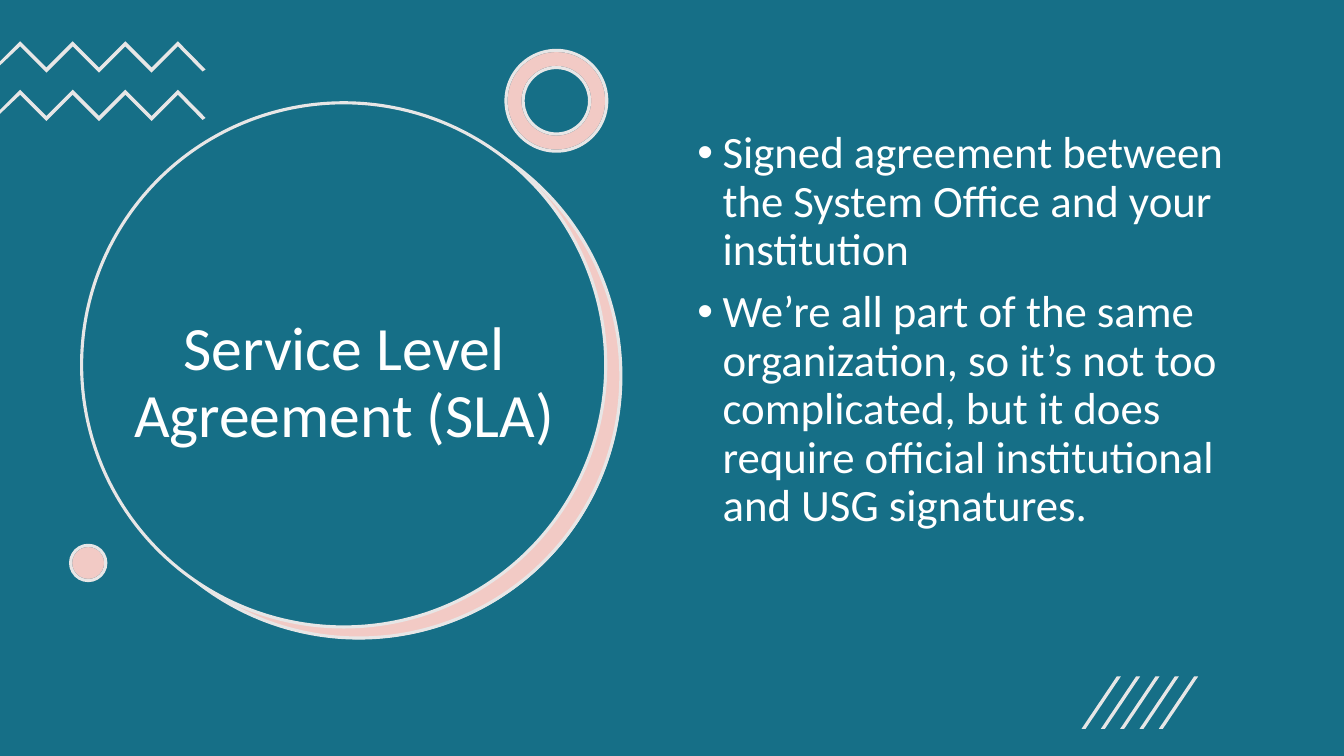
from lxml.etree import SubElement
from pptx import Presentation
from pptx.dml.color import RGBColor
from pptx.enum.shapes import MSO_SHAPE
from pptx.enum.text import MSO_ANCHOR, PP_ALIGN
from pptx.oxml.ns import qn
from pptx.util import Inches, Pt

TEAL = RGBColor(0x16, 0x6F, 0x87)
CORAL = RGBColor(0xD6, 0x52, 0x41)
PALE_GRAY = RGBColor(0xE7, 0xE6, 0xE6)
WHITE = RGBColor(0xFF, 0xFF, 0xFF)
FONT = "Calibri"

# The slide is a grid of 160 columns by 90 rows of square cells.
CELL = Inches(1) / 12


def cells(*counts):
    return [round(count * CELL) for count in counts]


def paint(shape, fill, line=None, opacity=100):
    """Set fill, outline and fill opacity (percent), without a shadow."""
    shape.shadow.inherit = False
    shape.fill.solid()
    shape.fill.fore_color.rgb = fill
    if line is None:
        shape.line.fill.background()
    else:
        shape.line.color.rgb = line
        shape.line.width = Pt(2.25)
    if opacity < 100:
        color = shape.fill._xPr.find(f"{qn('a:solidFill')}/{qn('a:srgbClr')}")
        SubElement(color, qn("a:alpha"), val=str(opacity * 1000))


presentation = Presentation()
presentation.slide_width, presentation.slide_height = cells(160, 90)
slide = presentation.slides.add_slide(presentation.slide_layouts[6])
slide.background.fill.solid()
slide.background.fill.fore_color.rgb = TEAL
shapes = slide.shapes

# Title disc: a tinted crescent shows behind the teal face
DISC_SIZE = 62.4
for left, top, fill, line, opacity in [
    (11.64, 13.68, WHITE, None, 100),
    (11.52, 13.56, CORAL, PALE_GRAY, 30),
    (9.72, 12.24, TEAL, PALE_GRAY, 100),
]:
    disc = shapes.add_shape(MSO_SHAPE.OVAL, *cells(left, top, DISC_SIZE, DISC_SIZE))
    paint(disc, fill, line, opacity)

title_frame = shapes.add_textbox(*cells(14.52, 24.6, 52.92, 42.24)).text_frame
title_frame.word_wrap = True
title_frame.vertical_anchor = MSO_ANCHOR.MIDDLE
title = title_frame.paragraphs[0]
title.text = "Service Level Agreement (SLA)"
title.alignment = PP_ALIGN.CENTER
title.line_spacing = 0.9
title.font.size = Pt(44)
title.font.name = FONT
title.font.color.rgb = WHITE

# Two zigzags running off the left edge
ZIGZAG_STEP = 3.13
ZIGZAG_THICKNESS = 0.6
upper_edge = [(2.4 + i * ZIGZAG_STEP, i % 2 * ZIGZAG_STEP) for i in range(7)]
lower_edge = [(x, y + ZIGZAG_THICKNESS) for x, y in reversed(upper_edge)]
zigzag_points = upper_edge + [(24.48, 3.36), (24.12, 3.6)] + lower_edge + [(0, 2.88), (0, 2.4)]
for top in (4.92, 10.68):
    outline = [cells(x, top + y) for x, y in zigzag_points]
    builder = shapes.build_freeform(*outline[0])
    builder.add_line_segments(outline[1:])
    paint(builder.convert_to_shape(), PALE_GRAY)

# Ring and dot: a translucent tint over white
for kind, left, top, size in [
    (MSO_SHAPE.DONUT, 60.24, 6, 12),
    (MSO_SHAPE.OVAL, 8.4, 64.92, 4.2),
]:
    for fill, line, opacity in [(WHITE, TEAL, 100), (CORAL, PALE_GRAY, 30)]:
        ornament = shapes.add_shape(kind, *cells(left, top, size, size))
        if kind == MSO_SHAPE.DONUT:
            ornament.adjustments[0] = 0.17
        paint(ornament, fill, line, opacity)

body_frame = shapes.add_textbox(*cells(81.84, 14.88, 68.52, 62.4)).text_frame
body_frame.word_wrap = True
for number, text in enumerate([
    "Signed agreement between the System Office and your institution",
    "We’re all part of the same organization, so it’s not too complicated, "
    "but it does require official institutional and USG signatures.",
]):
    paragraph = body_frame.add_paragraph() if number else body_frame.paragraphs[0]
    paragraph.text = text
    paragraph.line_spacing = 0.9
    paragraph.space_before = Pt(10)
    paragraph.font.size = Pt(32)
    paragraph.font.name = FONT
    paragraph.font.color.rgb = WHITE
    properties = paragraph._p.get_or_add_pPr()
    properties.set("marL", str(Inches(0.25)))
    properties.set("indent", str(-Inches(0.25)))
    bullet_font = properties.makeelement(qn("a:buFont"), {"typeface": "Arial"})
    bullet = properties.makeelement(qn("a:buChar"), {"char": "•"})
    properties.insert_element_before(bullet_font, "a:tabLst", "a:defRPr", "a:extLst")
    properties.insert_element_before(bullet, "a:tabLst", "a:defRPr", "a:extLst")

# Five slashes at the lower right
SLASH_TOP, SLASH_BOTTOM = 80.52, 86.76
SLASH_RUN, SLASH_THICKNESS, SLASH_STEP = 4.2, 0.48, 2.3
for index in range(5):
    left = 128.76 + index * SLASH_STEP
    builder = shapes.build_freeform(*cells(left + SLASH_THICKNESS, SLASH_BOTTOM))
    builder.add_line_segments([
        cells(left, SLASH_BOTTOM),
        cells(left + SLASH_RUN, SLASH_TOP),
        cells(left + SLASH_RUN + SLASH_THICKNESS, SLASH_TOP),
    ])
    paint(builder.convert_to_shape(), PALE_GRAY)

presentation.save("out.pptx")
